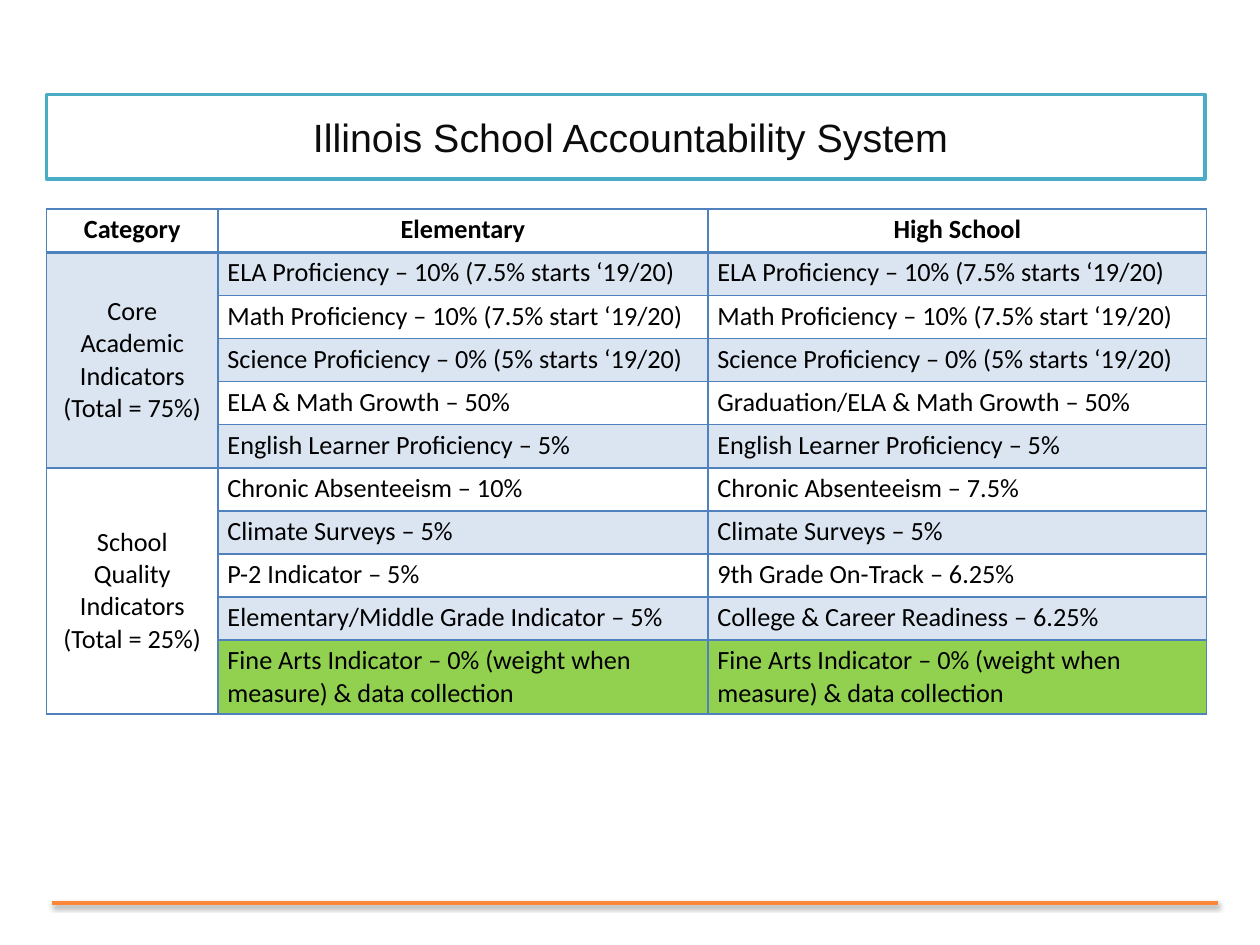
"""Build the Illinois School Accountability System slide."""
from lxml import etree
from pptx import Presentation
from pptx.dml.color import RGBColor
from pptx.enum.shapes import MSO_CONNECTOR
from pptx.enum.text import MSO_ANCHOR, PP_ALIGN
from pptx.oxml import parse_xml
from pptx.oxml.ns import nsdecls, qn
from pptx.util import Pt

BLUE, GREEN, WHITE, TEAL, ORANGE = "4F81BD", "92D050", "FFFFFF", "4BACC6", "FE8637"


def rgb(value):
    return RGBColor.from_string(value)


def set_border(cell, side, width):
    cell._tc.get_or_add_tcPr().append(parse_xml(
        f'<a:ln{side} {nsdecls("a")} w="{Pt(width)}"><a:solidFill>'
        f'<a:srgbClr val="{BLUE}"/></a:solidFill></a:ln{side}>'))


prs = Presentation()
prs.slide_width, prs.slide_height = Pt(720), Pt(540)
slide = prs.slides.add_slide(prs.slide_layouts[5])

title = slide.shapes.title
title.left, title.top, title.width, title.height = Pt(26.6), Pt(54), Pt(662), Pt(48.2)
title.fill.solid()
title.fill.fore_color.rgb = rgb(WHITE)
title.line.color.rgb = rgb(TEAL)
title.line.width = Pt(2)
title.text_frame.text = "Illinois School Accountability System"
title_format = {"margin_left": Pt(11.5), "margin_right": Pt(5.4), "margin_top": Pt(2.7),
                "margin_bottom": Pt(2.7), "vertical_anchor": MSO_ANCHOR.MIDDLE}
for name, value in title_format.items():
    setattr(title.text_frame, name, value)
heading = title.text_frame.paragraphs[0]
heading.alignment = PP_ALIGN.CENTER
for name, value in {"name": "Arial", "size": Pt(22.5), "bold": False}.items():
    setattr(heading.font, name, value)
heading.font.color.rgb = rgb("0C0C0C")

fine_arts = "Fine Arts Indicator – 0% (weight when measure) & data collection"
rows = [
    ("Category", "Elementary", "High School"),
    ("Core Academic Indicators (Total = 75%)",
     "ELA Proficiency – 10% (7.5% starts ‘19/20)", "ELA Proficiency – 10% (7.5% starts ‘19/20)"),
    ("", "Math Proficiency – 10% (7.5% start ‘19/20)", "Math Proficiency – 10% (7.5% start ‘19/20)"),
    ("", "Science Proficiency – 0% (5% starts ‘19/20)", "Science Proficiency – 0% (5% starts ‘19/20)"),
    ("", "ELA & Math Growth – 50%", "Graduation/ELA & Math Growth – 50%"),
    ("", "English Learner Proficiency – 5%", "English Learner Proficiency – 5%"),
    ("School Quality Indicators (Total = 25%)",
     "Chronic Absenteeism – 10%", "Chronic Absenteeism – 7.5%"),
    ("", "Climate Surveys – 5%", "Climate Surveys – 5%"),
    ("", "P-2 Indicator – 5%", "9th Grade On-Track – 6.25%"),
    ("", "Elementary/Middle Grade Indicator – 5%", "College & Career Readiness – 6.25%"),
    ("", fine_arts, fine_arts),
]
table = slide.shapes.add_table(len(rows), 3, Pt(26.6), Pt(119.5), Pt(663), Pt(288.5)).table
table.first_row = table.horz_banding = False
for column, width in zip(table.columns, (98, 280, 285)):
    column.width = Pt(width)
for row in table.rows:
    row.height = Pt(24.66)
table.rows[len(rows) - 1].height = Pt(41.9)
for first in (1, 6):
    table.cell(first, 0).merge(table.cell(first + 4, 0))

cell_format = {"margin_left": Pt(5.4), "margin_right": Pt(5.4),
               "margin_top": Pt(2.7), "margin_bottom": Pt(2.7)}
for r, texts in enumerate(rows):
    for c, text in enumerate(texts):
        cell = table.cell(r, c)
        for side in "LRTB":
            under_header = (r, side) in ((0, "B"), (1, "T"))
            set_border(cell, side, 2 if under_header else 1)
        if r == len(rows) - 1 and c:
            cell.fill.solid()
            cell.fill.fore_color.rgb = rgb(GREEN)
        elif (r % 2 if c else 1 <= r <= 5):
            cell.fill.solid()
            cell.fill.fore_color.rgb = rgb(BLUE)
            tint = cell._tc.tcPr.find(qn("a:solidFill"))[0]
            etree.SubElement(tint, qn("a:alpha"), val="20000")
        else:
            cell.fill.background()
        for name, value in cell_format.items():
            setattr(cell, name, value)
        cell.vertical_anchor = MSO_ANCHOR.MIDDLE if r and c == 0 else MSO_ANCHOR.TOP
        if not text:
            continue
        cell.text = text
        entry = cell.text_frame.paragraphs[0]
        entry.alignment = PP_ALIGN.CENTER if r == 0 or c == 0 else PP_ALIGN.LEFT
        for name, value in {"name": "Calibri", "size": Pt(15), "bold": r == 0}.items():
            setattr(entry.font, name, value)
        entry.font.color.rgb = rgb("000000")

footer_rule = slide.shapes.add_connector(
    MSO_CONNECTOR.STRAIGHT, Pt(30), Pt(516), Pt(696), Pt(516))
footer_rule.line.color.rgb = rgb(ORANGE)
footer_rule.line.width = Pt(2)
footer_rule._element.spPr.append(parse_xml(
    f'<a:effectLst {nsdecls("a")}><a:outerShdw blurRad="{Pt(3.1)}" dist="{Pt(1.6)}" dir="5400000" '
    'rotWithShape="0"><a:srgbClr val="000000"><a:alpha val="38000"/></a:srgbClr>'
    '</a:outerShdw></a:effectLst>'))

prs.save("out.pptx")
